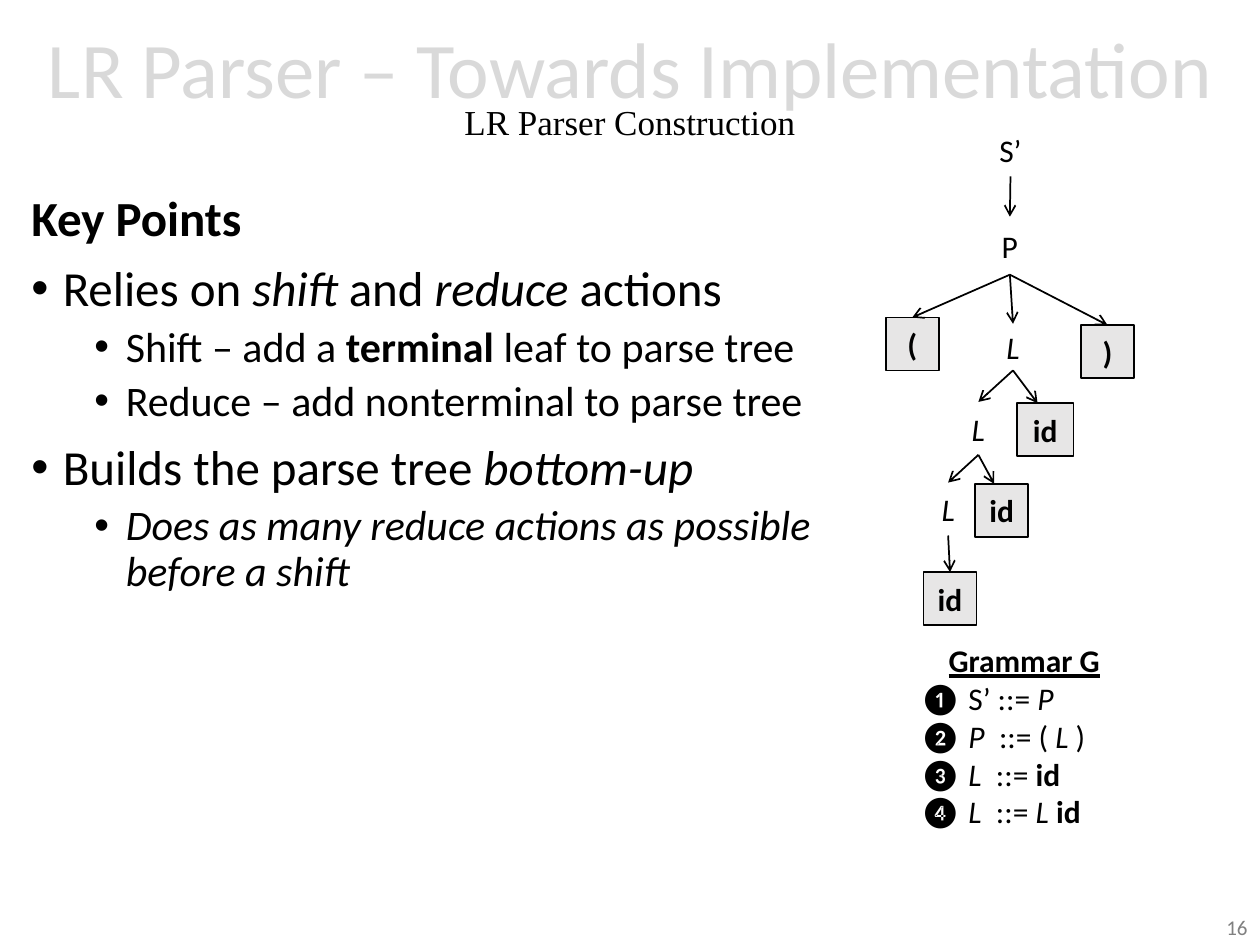
from lxml import etree
from pptx import Presentation
from pptx import util as u
from pptx.dml.color import RGBColor
from pptx.enum import shapes, text
from pptx.oxml.ns import qn

BLACK, WHITE, LEAF_FILL = "000000", "FFFFFF", "E7E6E6"
STYLES = {"b": "bold", "i": "italic", "u": "underline"}

# Paragraphs: (level, [(words, style letters), ...])
KEY_POINTS = [
    (None, [("Key Points", "b")]),
    (0, [("Relies on ", ""), ("shift ", "i"), ("and ", ""), ("reduce", "i"), (" actions", "")]),
    (1, [("Shift – add a ", ""), ("terminal", "b"), (" leaf to parse tree", "")]),
    (1, [("Reduce – add nonterminal to parse tree", "")]),
    (0, [("Builds the parse tree ", ""), ("bottom-up", "i")]),
    (1, [("Does as many reduce actions as possible before a shift", "i")]),
]
GRAMMAR = [
    [("Grammar G", "bu")],
    [("❶ S’ ::= ", ""), ("P", "i")],
    [("❷", ""), (" P  ", "i"), ("::= ( ", ""), ("L", "i"), (" )", "")],
    [("❸", ""), (" L", "i"), ("  ::= ", ""), ("id", "b")],
    [("❹", ""), (" L", "i"), ("  ::= ", ""), ("L ", "i"), ("id", "b")],
]

# Tree nodes: label, style, (left, top, width, height); bold ones are terminals
NODES = {
    "start": ("S’", "", (7.81, 0.98, 0.42, 0.42)),
    "program": ("P", "", (7.61, 1.72, 0.81, 0.46)),
    "open": ("(", "b", (7.03, 2.52, 0.42, 0.42)),
    "close": (")", "b", (8.58, 2.58, 0.42, 0.42)),
    "list1": ("L", "i", (7.89, 2.57, 0.3, 0.37)),
    "list2": ("L", "i", (7.63, 3.19, 0.27, 0.42)),
    "id1": ("id", "b", (8.07, 3.2, 0.45, 0.42)),
    "list3": ("L", "i", (7.39, 3.83, 0.27, 0.42)),
    "id2": ("id", "b", (7.74, 3.84, 0.42, 0.42)),
    "id3": ("id", "b", (7.33, 4.54, 0.42, 0.42)),
}
CHILDREN = {
    "start": ["program"],
    "program": ["open", "list1", "close"],
    "list1": ["list2", "id1"],
    "list2": ["list3", "id2"],
    "list3": ["id3"],
}
# Arrows to these leaves land a little left of the middle
ARROW_SHIFT = {"id1": -0.06, "id2": -0.06}


def rgb(hex_code):
    return RGBColor.from_string(hex_code)


def add_run(paragraph, words, size, style="", color=BLACK, font="Calibri"):
    run = paragraph.add_run()
    run.text = words
    run.font.color.rgb = rgb(color)
    values = {"name": font, "size": u.Pt(size)}
    values.update({name: key in style for key, name in STYLES.items()})
    for name, value in values.items():
        setattr(run.font, name, value)


def add_text_box(slide, area):
    frame = slide.shapes.add_textbox(*map(u.Inches, area)).text_frame
    frame.word_wrap = True
    return frame


def paragraphs(frame, count):
    """Yield count paragraphs, beginning with the one the frame already has."""
    yield frame.paragraphs[0]
    for _ in range(count - 1):
        yield frame.add_paragraph()


def indent(paragraph, left, first=0.0):
    properties = paragraph._p.get_or_add_pPr()
    properties.set("marL", str(u.Inches(left)))
    properties.set("indent", str(u.Inches(first)))
    return properties


def add_title(slide):
    title = slide.shapes.title
    area = {"left": 0, "top": 0, "width": 10, "height": 1.48}
    for name, value in area.items():
        setattr(title, name, u.Inches(value))
    frame = title.text_frame
    frame.word_wrap = True
    frame.auto_size = text.MSO_AUTO_SIZE.NONE
    frame.vertical_anchor = text.MSO_ANCHOR.MIDDLE
    heading = frame.paragraphs[0]
    heading.alignment = text.PP_ALIGN.CENTER
    heading.line_spacing = 0.7
    add_run(heading, "LR Parser – Towards Implementation", 45, color="D9D9D9")
    heading.add_line_break()
    add_run(heading, "LR Parser Construction", 20, font="Times New Roman")


def add_key_points(slide):
    frame = add_text_box(slide, (0.15, 1.49, 6.6, 5.21))
    for paragraph, (level, runs) in zip(paragraphs(frame, len(KEY_POINTS)), KEY_POINTS):
        paragraph.line_spacing = 0.9
        paragraph.space_before = u.Pt(5 if level else 10)
        if level is not None:
            paragraph.level = level
            properties = indent(paragraph, 0.25 + 0.5 * level, -0.25)
            etree.SubElement(properties, qn("a:buFont"), typeface="Arial")
            etree.SubElement(properties, qn("a:buChar"), char="•")
        for words, style in runs:
            add_run(paragraph, words, 24 if level else 28, style)


def add_node(slide, label, style, area):
    node = slide.shapes.add_shape(shapes.MSO_SHAPE.RECTANGLE, *map(u.Inches, area))
    node.shadow.inherit = False
    terminal = style == "b"
    node.fill.solid()
    node.fill.fore_color.rgb = rgb(LEAF_FILL if terminal else WHITE)
    if terminal:
        node.line.color.rgb = rgb(BLACK)
        node.line.width = u.Pt(1)
    else:
        node.line.fill.background()
    frame = node.text_frame
    frame.word_wrap = False
    frame.vertical_anchor = text.MSO_ANCHOR.MIDDLE
    for side in ("left", "right", "top", "bottom"):
        setattr(frame, f"margin_{side}", 0)
    frame.paragraphs[0].alignment = text.PP_ALIGN.CENTER
    add_run(frame.paragraphs[0], label, 18, style)


def add_arrow(slide, parent, child):
    """Join the bottom middle of the parent to the top of the child."""
    left, top, width, height = NODES[parent][2]
    child_left, child_top, child_width, _ = NODES[child][2]
    end_x = child_left + child_width / 2 + ARROW_SHIFT.get(child, 0)
    ends = (left + width / 2, top + height, end_x, child_top)
    arrow = slide.shapes.add_connector(shapes.MSO_CONNECTOR.STRAIGHT, *map(u.Inches, ends))
    arrow.line.color.rgb = rgb(BLACK)
    arrow.line.width = u.Pt(1)
    etree.SubElement(arrow.line._get_or_add_ln(), qn("a:tailEnd"), type="arrow")
    etree.SubElement(arrow._element.spPr, qn("a:effectLst"))


def add_parse_tree(slide):
    for label, style, area in NODES.values():
        add_node(slide, label, style, area)
    for parent, children in CHILDREN.items():
        for child in children:
            add_arrow(slide, parent, child)


def add_grammar(slide):
    frame = add_text_box(slide, (7.2, 5.04, 1.86, 1.62))
    for paragraph, runs in zip(paragraphs(frame, len(GRAMMAR)), GRAMMAR):
        for words, style in runs:
            add_run(paragraph, words, 18, style)
    indent(frame.paragraphs[0], 0.23)


def add_page_number(slide):
    number = add_text_box(slide, (7.75, 7.21, 2.25, 0.28)).paragraphs[0]
    number.alignment = text.PP_ALIGN.RIGHT
    add_run(number, "16", 12, color="808080")


def main():
    deck = Presentation()
    deck.slide_width, deck.slide_height = u.Inches(10), u.Inches(7.5)
    slide = deck.slides.add_slide(deck.slide_layouts[5])
    add_title(slide)
    add_page_number(slide)
    add_key_points(slide)
    add_parse_tree(slide)
    add_grammar(slide)
    deck.save("out.pptx")


if __name__ == "__main__":
    main()
